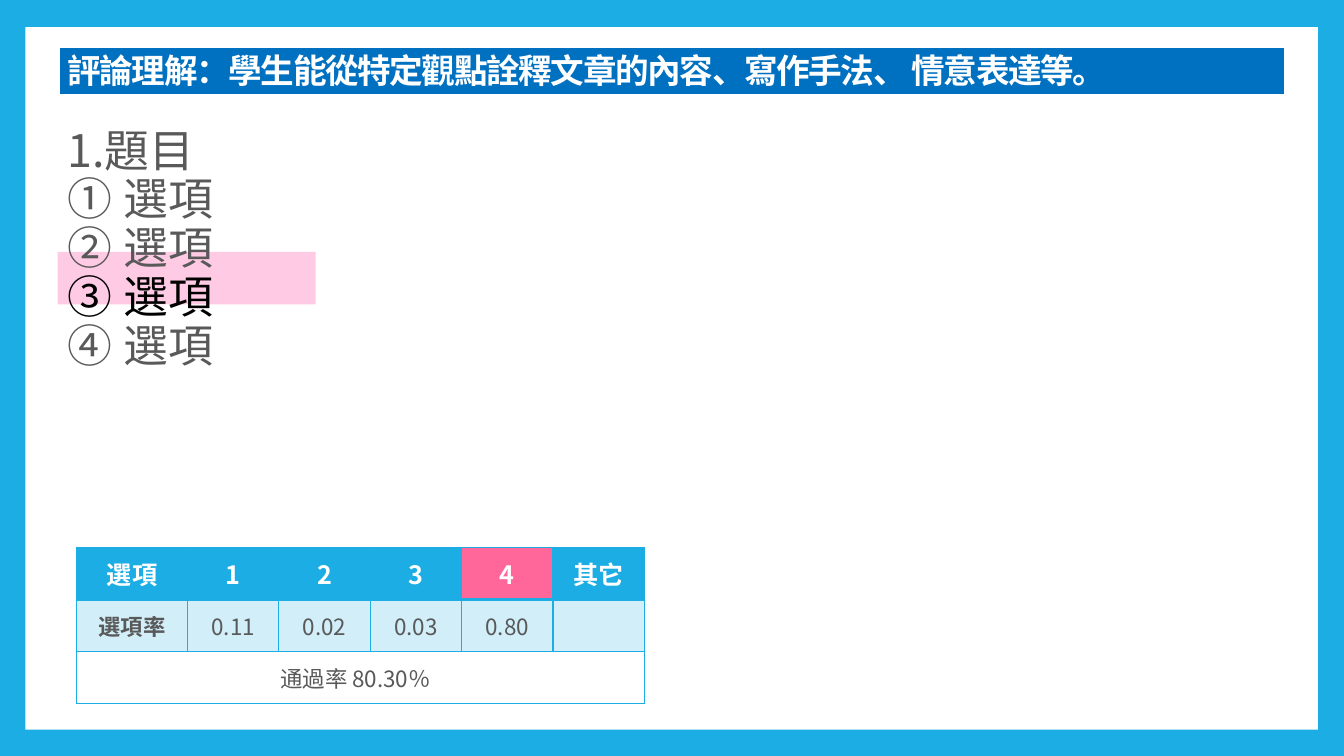
"""Build a reading-comprehension question slide with its answer-rate table."""
from typing import Any, NamedTuple

from lxml import etree
from pptx import Presentation
from pptx import util as u
from pptx.dml.color import RGBColor
from pptx.enum import shapes, text
from pptx.oxml import ns

WIDTH, HEIGHT = u.Inches(13.33), u.Inches(7.5)
SC, TC = "Noto Sans CJK SC", "Noto Sans CJK TC"
SKY, WHITE, GREY, BLACK = "1CADE4", "FFFFFF", "595959", "000000"


class Box(NamedTuple):
    left: float
    top: float
    width: float
    height: float


class Panel(NamedTuple):
    box: Box
    fill: str
    opacity: int = 100


class Style(NamedTuple):
    size: int
    color: str
    font: str = SC
    bold: bool = False


class Line(NamedTuple):
    wording: str
    color: str
    spacing: float
    indent: float
    numbered: bool


BACKDROP = Panel(Box(1.88, 3.6, 96.17, 92.93), WHITE)
HIGHLIGHT = Panel(Box(4.28, 33.33, 19.2, 6.93), "FFAFD7", 65)
BANNER = Panel(Box(4.28, 6, 91.45, 6.8), "0070C0")
QUESTION_BOX = Box(4.28, 15.6, 91.45, 56.67)
TABLE_BOX = Box(5.7, 72.4, 42.25, 20.7)
COLUMN_SHARES = [8.25] + [6.8] * 5

BANNER_TEXT = "評論理解：學生能從特定觀點詮釋文章的內容、寫作手法、 情意表達等。"
QUESTION = [Line("1.題目", GREY, 1.0, 0.69, False)] + [
    Line("選項", color, 0.91, 0.56, True) for color in (GREY, GREY, BLACK, GREY)
]
HEADINGS = ["選項", "1", "2", "3", "4", "其它"]
RATES = ["選項率", "0.11", "0.02", "0.03", "0.80", ""]
PASS_RATE = "通過率 80.30％"
ANSWER = "4"


def across(share: float) -> int:
    return round(WIDTH * share / 100)


def down(share: float) -> int:
    return round(HEIGHT * share / 100)


def place(box: Box) -> tuple[int, int, int, int]:
    return across(box.left), down(box.top), across(box.width), down(box.height)


def apply(target: Any, values: dict[str, Any]) -> None:
    for name, value in values.items():
        setattr(target, name, value)


def add_xml(parent: Any, tag: str, **attributes: str) -> Any:
    return etree.SubElement(parent, ns.qn(tag), attributes)


def paint(fill: Any, color: str, opacity: int = 100) -> None:
    fill.solid()
    fill.fore_color.rgb = RGBColor.from_string(color)
    if opacity < 100:
        color_node = fill._xPr.find(".//" + ns.qn("a:srgbClr"))
        add_xml(color_node, "a:alpha", val=str(opacity * 1000))


def add_run(paragraph: Any, wording: str, style: Style) -> Any:
    run = paragraph.add_run()
    run.text = wording
    apply(run.font, {"size": u.Pt(style.size), "bold": style.bold, "name": style.font})
    run.font.color.rgb = RGBColor.from_string(style.color)
    add_xml(run._r.get_or_add_rPr(), "a:ea", typeface=style.font)
    return run


def add_panel(slide: Any, panel: Panel) -> Any:
    shape = slide.shapes.add_shape(shapes.MSO_SHAPE.RECTANGLE, *place(panel.box))
    shape.shadow.inherit = False
    paint(shape.fill, panel.fill, panel.opacity)
    shape.line.fill.background()
    return shape


def add_banner(slide: Any) -> None:
    shape = add_panel(slide, BANNER)
    paint(shape.line.fill, WHITE)
    shape.line.width = u.Pt(4.25)
    apply(shape.text_frame, {"word_wrap": True, "vertical_anchor": text.MSO_ANCHOR.TOP})
    paragraph = shape.text_frame.paragraphs[0]
    paragraph.alignment = text.PP_ALIGN.LEFT
    run = add_run(paragraph, BANNER_TEXT, Style(24, WHITE, bold=True))
    run._r.get_or_add_rPr().set("spc", "-100")


def add_question(slide: Any) -> None:
    frame = slide.shapes.add_textbox(*place(QUESTION_BOX)).text_frame
    frame.word_wrap = True
    for index, line in enumerate(QUESTION):
        paragraph = frame.add_paragraph() if index else frame.paragraphs[0]
        paragraph.line_spacing = line.spacing
        properties = paragraph._p.get_or_add_pPr()
        indent = u.Inches(line.indent)
        properties.set("marL", str(indent))
        properties.set("indent", str(-indent))
        if line.numbered:
            add_xml(properties, "a:buFont", typeface=SC)
            add_xml(properties, "a:buAutoNum", type="circleNumWdWhitePlain")
        add_run(paragraph, line.wording, Style(32, line.color))


def add_borders(cell: Any, bottom: float) -> None:
    properties = cell._tc.get_or_add_tcPr()
    widths = {"a:lnL": 1, "a:lnR": 1, "a:lnT": 1, "a:lnB": bottom}
    for position, (tag, points) in enumerate(widths.items()):
        border = etree.Element(ns.qn(tag), {"w": str(u.Pt(points))})
        add_xml(add_xml(border, "a:solidFill"), "a:srgbClr", val=SKY)
        properties.insert(position, border)


def fill_cell(cell: Any, wording: str, style: Style, color: str, opacity: int, bottom: float) -> None:
    paint(cell.fill, color, opacity)
    add_borders(cell, bottom)
    cell.vertical_anchor = text.MSO_ANCHOR.MIDDLE
    paragraph = cell.text_frame.paragraphs[0]
    paragraph.alignment = text.PP_ALIGN.CENTER
    if wording:
        add_run(paragraph, wording, style)


def add_rates(slide: Any) -> None:
    table = slide.shapes.add_table(3, len(HEADINGS), *place(TABLE_BOX)).table
    for column, share in zip(table.columns, COLUMN_SHARES):
        column.width = across(share)
    for index, (heading, rate) in enumerate(zip(HEADINGS, RATES)):
        heading_fill = "FF6699" if heading == ANSWER else SKY
        rate_style = Style(16, GREY) if index else Style(16, GREY, TC, True)
        fill_cell(table.cell(0, index), heading, Style(18, WHITE, TC, True), heading_fill, 100, 2)
        fill_cell(table.cell(1, index), rate, rate_style, SKY, 20, 1)
        fill_cell(table.cell(2, index), "", rate_style, WHITE, 100, 1)
    footer = table.cell(2, 0)
    footer.merge(table.cell(2, len(HEADINGS) - 1))
    footer.margin_right = u.Inches(0.2)
    add_run(footer.text_frame.paragraphs[0], PASS_RATE, Style(16, GREY, TC))


def main() -> None:
    presentation = Presentation()
    apply(presentation, {"slide_width": WIDTH, "slide_height": HEIGHT})
    slide = presentation.slides.add_slide(presentation.slide_layouts[6])
    paint(slide.background.fill, SKY)
    add_panel(slide, BACKDROP)
    add_panel(slide, HIGHLIGHT)
    add_question(slide)
    add_banner(slide)
    add_rates(slide)
    presentation.save("out.pptx")


if __name__ == "__main__":
    main()
